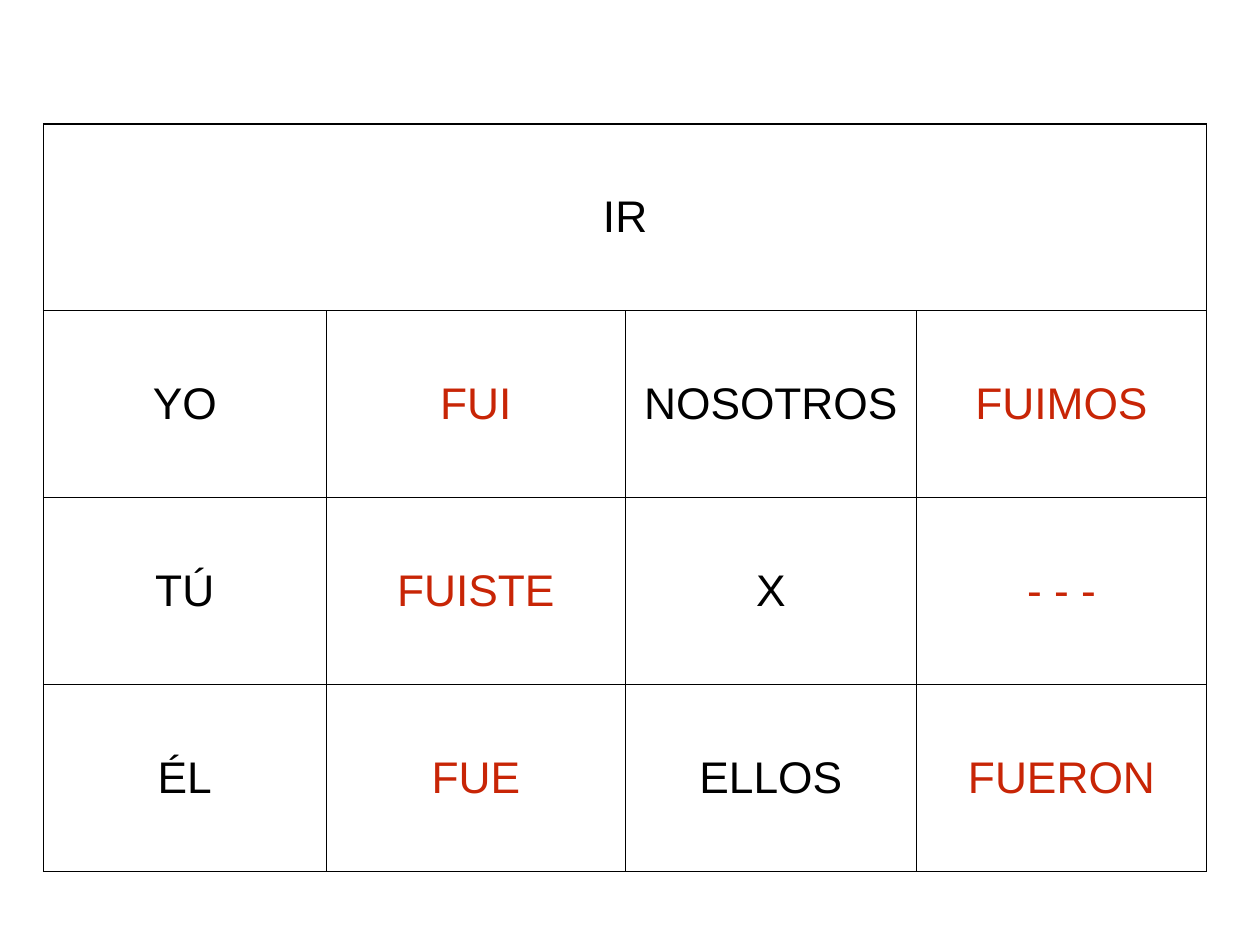
from dataclasses import dataclass

from lxml import etree
from pptx import Presentation
from pptx.dml.color import RGBColor
from pptx.enum import text
from pptx.oxml import ns
from pptx.util import Inches, Pt

VERB = "IR"
CONJUGATION = [
    ("YO", "FUI", "NOSOTROS", "FUIMOS"),
    ("TÚ", "FUISTE", "X", "- - -"),
    ("ÉL", "FUE", "ELLOS", "FUERON"),
]
COLUMN_WIDTHS = (3.19, 3.38, 3.28, 3.28)
ROW_HEIGHT = 2.11
LEFT, TOP = 0.49, 1.4
PADDING = 0.06


@dataclass(frozen=True)
class Theme:
    font: str = "Arial"
    size: int = 36
    pronoun: str = "000000"
    verb_form: str = "C82506"
    paper: str = "FFFFFF"
    border: str = "000000"
    border_width: int = 1


THEME = Theme()


def add_borders(cell):
    properties = cell._tc.get_or_add_tcPr()
    for side in ("lnL", "lnR", "lnT", "lnB"):
        line = etree.SubElement(properties, ns.qn(f"a:{side}"), w=str(Pt(THEME.border_width)))
        fill = etree.SubElement(line, ns.qn("a:solidFill"))
        etree.SubElement(fill, ns.qn("a:srgbClr"), val=THEME.border)


def style_cell(cell):
    add_borders(cell)
    cell.fill.solid()
    cell.fill.fore_color.rgb = RGBColor.from_string(THEME.paper)
    cell.vertical_anchor = text.MSO_ANCHOR.MIDDLE
    cell.margin_left = cell.margin_right = Inches(PADDING)
    cell.margin_top = cell.margin_bottom = Inches(PADDING)


def write_cell(cell, words, color):
    para = cell.text_frame.paragraphs[0]
    para.text = words
    para.alignment = text.PP_ALIGN.CENTER
    font = para.runs[0].font
    font.name, font.size, font.bold = THEME.font, Pt(THEME.size), False
    font.color.rgb = RGBColor.from_string(color)


def add_conjugation_table(page):
    row_count = len(CONJUGATION) + 1
    frame = page.shapes.add_table(
        row_count, len(COLUMN_WIDTHS), Inches(LEFT), Inches(TOP),
        Inches(sum(COLUMN_WIDTHS)), Inches(ROW_HEIGHT * row_count))
    table = frame.table
    table.first_row = table.horz_banding = False
    for column, width in zip(table.columns, COLUMN_WIDTHS):
        column.width = Inches(width)
    for row in table.rows:
        row.height = Inches(ROW_HEIGHT)
    for cell in table.iter_cells():
        style_cell(cell)

    heading = table.cell(0, 0)
    heading.merge(table.cell(0, len(COLUMN_WIDTHS) - 1))
    write_cell(heading, VERB, THEME.pronoun)
    for row, entries in enumerate(CONJUGATION, start=1):
        for column, words in enumerate(entries):
            color = THEME.verb_form if column % 2 else THEME.pronoun
            write_cell(table.cell(row, column), words, color)


def main():
    deck = Presentation()
    deck.slide_width, deck.slide_height = Inches(14.22), Inches(10.67)
    page = deck.slides.add_slide(deck.slide_layouts.get_by_name("Blank"))
    add_conjugation_table(page)
    deck.save("out.pptx")


if __name__ == "__main__":
    main()
